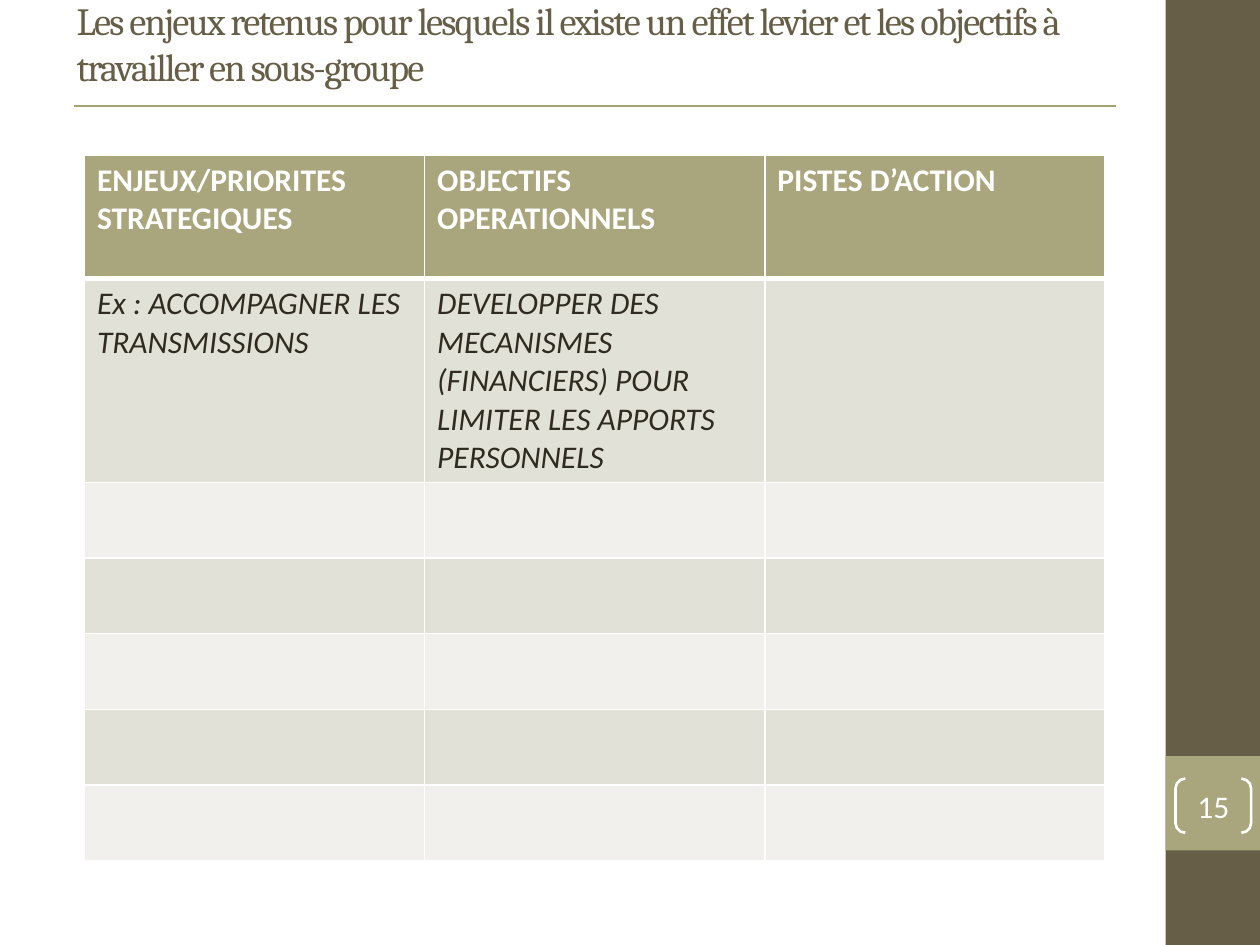
from pptx import Presentation
from pptx.dml.color import RGBColor
from pptx.enum import shapes, text
from pptx.oxml import parse_xml
from pptx.oxml.ns import nsdecls
from pptx.util import Inches, Pt

BROWN, OLIVE, RULE, WHITE, INK = "675E47", "A9A57C", "A6A278", "FFFFFF", "2F2B20"
BANDS = ["E2E1D7", "F1F0EC"]

TITLE = ("Les enjeux retenus pour lesquels il existe un effet levier "
         "et les objectifs à travailler en sous-groupe")
PAGE_NUMBER = "15"
HEADINGS = ["ENJEUX/PRIORITES STRATEGIQUES", "OBJECTIFS OPERATIONNELS", "PISTES D’ACTION"]
EXAMPLE = ["Ex : ACCOMPAGNER LES TRANSMISSIONS",
           "DEVELOPPER DES MECANISMES (FINANCIERS) POUR LIMITER LES APPORTS PERSONNELS",
           ""]
EMPTY_ROWS = 5
ROWS = [HEADINGS, EXAMPLE] + [[""] * len(HEADINGS)] * EMPTY_ROWS
ROW_HEIGHTS = [0.98, 1.62] + [0.6] * EMPTY_ROWS
COLUMN_WIDTH = 2.7


def color(value):
    return RGBColor.from_string(value)


def add_run(paragraph, words, size, font, ink, bold=False, italic=False):
    run = paragraph.add_run()
    run.text = words
    run.font.size, run.font.name = Pt(size), font
    run.font.bold, run.font.italic = bold, italic
    run.font.color.rgb = color(ink)
    return run


def add_panel(slide, kind, box, fill=None):
    """Add a preset shape without line or shadow, filled only if asked."""
    panel = slide.shapes.add_shape(kind, *map(Inches, box))
    panel.shadow.inherit = False
    panel.line.fill.background()
    if fill:
        panel.fill.solid()
        panel.fill.fore_color.rgb = color(fill)
    else:
        panel.fill.background()
    return panel


def set_borders(cell, bottom):
    """White borders of 1 pt, with the bottom one as wide as given."""
    widths = {"lnL": 1, "lnR": 1, "lnT": 1, "lnB": bottom}
    for position, (side, width) in enumerate(widths.items()):
        cell._tc.get_or_add_tcPr().insert(position, parse_xml(
            f'<a:{side} {nsdecls("a")} w="{Pt(width)}"><a:solidFill>'
            f'<a:srgbClr val="{WHITE}"/></a:solidFill></a:{side}>'))


def add_sidebar(slide):
    add_panel(slide, shapes.MSO_SHAPE.RECTANGLE, (9.25, 0, 0.75, 7.5), BROWN)
    add_panel(slide, shapes.MSO_SHAPE.RECTANGLE, (9.25, 6, 0.75, 0.75), OLIVE)
    bracket = add_panel(slide, shapes.MSO_SHAPE.DOUBLE_BRACKET, (9.33, 6.18, 0.6, 0.43))
    bracket.adjustments[0] = 0.18
    bracket.line.color.rgb = color(WHITE)
    bracket.line.width = Pt(1.5)
    frame = bracket.text_frame
    frame.margin_left = frame.margin_right = frame.margin_top = frame.margin_bottom = 0
    frame.vertical_anchor = text.MSO_ANCHOR.MIDDLE
    frame.paragraphs[0].alignment = text.PP_ALIGN.CENTER
    add_run(frame.paragraphs[0], PAGE_NUMBER, 18, "Calibri", WHITE)


def add_title(slide):
    frame = slide.shapes.add_textbox(*map(Inches, (0.51, 0.08, 8.33, 0.52))).text_frame
    frame.word_wrap = True
    frame.vertical_anchor = text.MSO_ANCHOR.MIDDLE
    run = add_run(frame.paragraphs[0], TITLE, 22, "Cambria", BROWN)
    run._r.get_or_add_rPr().set("spc", "-100")
    rule = slide.shapes.add_connector(
        shapes.MSO_CONNECTOR.STRAIGHT, *map(Inches, (0.59, 0.84, 8.86, 0.84)))
    rule.line.color.rgb = color(RULE)
    rule.line.width = Pt(1)
    rule._element.spPr.append(parse_xml(f'<a:effectLst {nsdecls("a")}/>'))


def add_objectives(slide):
    box = (0.67, 1.23, COLUMN_WIDTH * len(HEADINGS), sum(ROW_HEIGHTS))
    table = slide.shapes.add_table(len(ROWS), len(HEADINGS), *map(Inches, box)).table
    for column in table.columns:
        column.width = Inches(COLUMN_WIDTH)
    for r, (words_in_row, height) in enumerate(zip(ROWS, ROW_HEIGHTS)):
        table.rows[r].height = Inches(height)
        heading = r == 0
        for c, words in enumerate(words_in_row):
            cell = table.cell(r, c)
            cell.fill.solid()
            cell.fill.fore_color.rgb = color(OLIVE if heading else BANDS[(r - 1) % 2])
            set_borders(cell, 3 if heading else 1)
            if words:
                add_run(cell.text_frame.paragraphs[0], words, 18, "Calibri",
                        WHITE if heading else INK, bold=heading, italic=not heading)


def main():
    deck = Presentation()
    deck.slide_width, deck.slide_height = Inches(10), Inches(7.5)
    slide = deck.slides.add_slide(deck.slide_layouts[6])
    add_sidebar(slide)
    add_title(slide)
    add_objectives(slide)
    deck.save("out.pptx")


if __name__ == "__main__":
    main()
